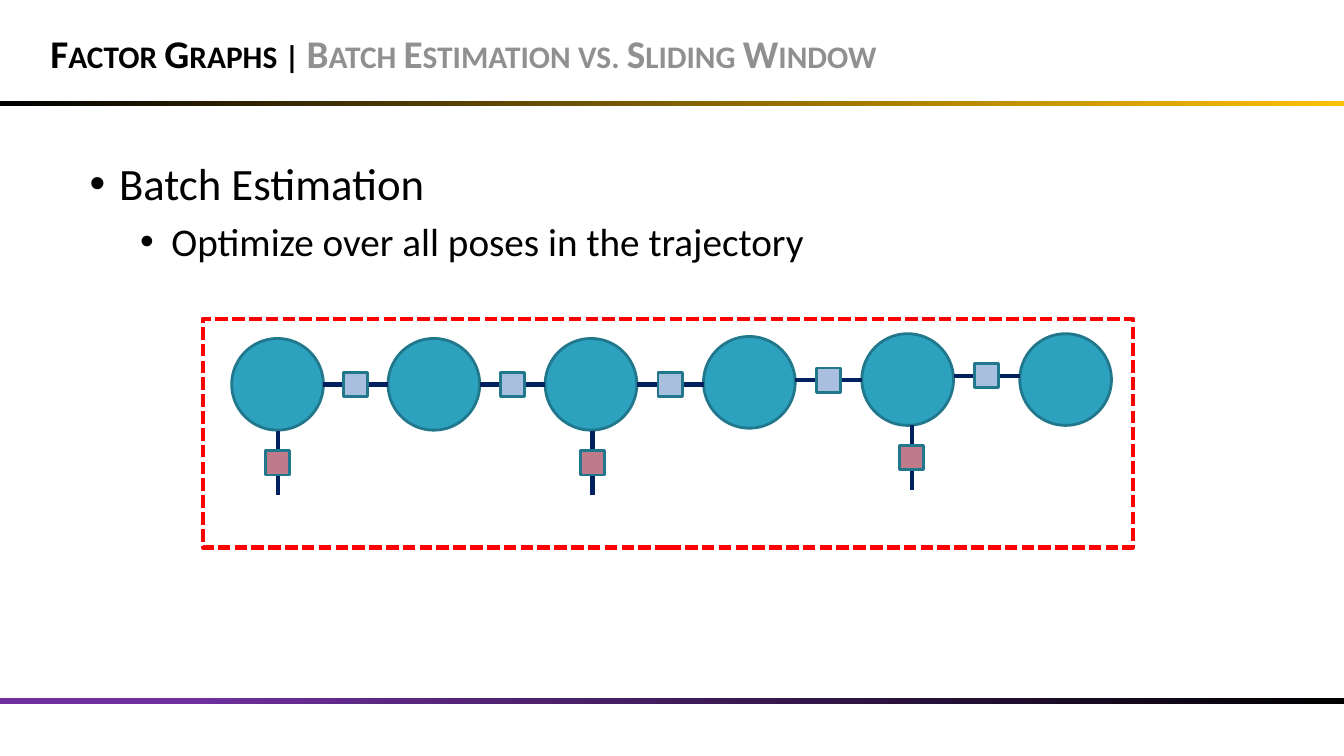
from pptx import Presentation
from pptx.dml.color import RGBColor
from pptx.enum.dml import MSO_LINE
from pptx.enum.shapes import MSO_CONNECTOR, MSO_SHAPE
from pptx.enum.text import MSO_ANCHOR
from pptx.oxml.ns import qn
from pptx.util import Cm, Pt
from lxml.etree import SubElement


def color(code):
    return RGBColor.from_string(code)


class GraphSlide:
    """Holds the slide style and draws each kind of element."""
    font = "Calibri"
    black = "000000"
    outline = "21788D"
    link_color = "002060"

    def __init__(self, page):
        self.page = page
        self.graph = page.shapes.add_group_shape()

    def shape(self, parent, kind, left, top, width, height):
        box = parent.shapes.add_shape(kind, Cm(left), Cm(top), Cm(width), Cm(height))
        box.shadow.inherit = False
        return box

    def rule(self, top, stops, angle):
        bar = self.shape(self.page, MSO_SHAPE.RECTANGLE, 0, top, 33.87, 0.13)
        bar.line.fill.background()
        bar.fill.gradient()
        bar.fill.gradient_angle = angle
        for stop, (position, code) in zip(bar.fill.gradient_stops, stops):
            stop.position = position
            stop.color.rgb = color(code)

    def node(self, kind, left, top, size, fill):
        node = self.shape(self.graph, kind, left, top, size, size)
        node.fill.solid()
        node.fill.fore_color.rgb = color(fill)
        node.line.color.rgb = color(self.outline)
        node.line.width = Pt(2)

    def factor(self, start, end, fill, side=0.61):
        """A link with a square at its middle."""
        link = self.graph.shapes.add_connector(
            MSO_CONNECTOR.STRAIGHT, *(Cm(value) for value in start + end))
        link.line.color.rgb = color(self.link_color)
        link.line.width = Pt(3)
        SubElement(link._element.spPr, qn("a:effectLst"))
        left, top = ((a + b - side) / 2 for a, b in zip(start, end))
        self.node(MSO_SHAPE.RECTANGLE, left, top, side, fill)

    def frame(self, left, top, width, height, code):
        box = self.shape(self.graph, MSO_SHAPE.RECTANGLE, left, top, width, height)
        box.fill.background()
        box.line.color.rgb = color(code)
        box.line.width = Pt(3)
        box.line.dash_style = MSO_LINE.SQUARE_DOT

    def text_box(self, left, top, width, height, anchor):
        box = self.page.shapes.add_textbox(Cm(left), Cm(top), Cm(width), Cm(height))
        box.text_frame.word_wrap = True
        box.text_frame.vertical_anchor = anchor
        return box.text_frame

    def span(self, para, text, size, code):
        span = para.add_run()
        span.text = text
        span.font.name = self.font
        span.font.size = Pt(size)
        span.font.color.rgb = color(code)
        return span

    def title(self, parts):
        para = self.text_box(1.02, 0.13, 22.05, 2.39, MSO_ANCHOR.MIDDLE).paragraphs[0]
        for text, code in parts:
            span = self.span(para, text, 28, code)
            span.font.bold = True
            span.font._element.set("cap", "small")

    def bullets(self, items):
        frame = self.text_box(2.01, 3.81, 29.64, 11.86, MSO_ANCHOR.TOP)
        for level, (text, size, margin, hanging) in enumerate(items):
            para = frame.add_paragraph() if level else frame.paragraphs[0]
            properties = para._p.get_or_add_pPr()
            properties.set("marL", str(Cm(margin)))
            properties.set("indent", str(-Cm(hanging)))
            SubElement(properties, qn("a:buFont"), typeface="Arial")
            SubElement(properties, qn("a:buChar"), char="•")
            para.level = level
            if level:
                para.space_before = Pt(size * 0.2)
            self.span(para, text, size, self.black)


def main():
    deck = Presentation()
    deck.slide_width, deck.slide_height = Cm(33.87), Cm(19.05)
    slide = GraphSlide(deck.slides.add_slide(deck.slide_layouts[6]))

    # Header and footer rules, title
    slide.rule(2.54, [(0, "000000"), (1, "FFC000")], 0)
    slide.rule(17.6, [(0.13, "7030A0"), (1, "000000")], 315)
    slide.title([("Factor Graphs | ", "000000"),
                 ("Batch Estimation vs. Sliding Window", "909090")])

    # Poses
    diameter = 2.31
    poses = [(5.84, 8.53), (9.78, 8.53), (13.74, 8.53),
             (17.73, 8.48), (21.72, 8.41), (25.7, 8.41)]
    for left, top in poses:
        slide.node(MSO_SHAPE.OVAL, left, top, diameter, "2DA2BF")

    # Factors between neighbouring poses
    heights = [9.69, 9.69, 9.69, 9.58, 9.47]
    for (left, _), (right, _), y in zip(poses, poses[1:], heights):
        slide.factor((left + diameter, y), (right, y), "A8BFDF")

    # Factors hanging below single poses
    for x, top in [(7.0, 10.85), (14.93, 10.85), (22.98, 10.72)]:
        slide.factor((x, top), (x, top + 1.63), "C07B8A")

    # Batch window
    slide.frame(5.11, 8.03, 23.44, 5.77, "FF0000")

    # Bullets
    slide.bullets([("Batch Estimation", 32, 0.74, 0.74),
                   ("Optimize over all poses in the trajectory", 28, 2.06, 0.79)])

    deck.save("out.pptx")


if __name__ == "__main__":
    main()
